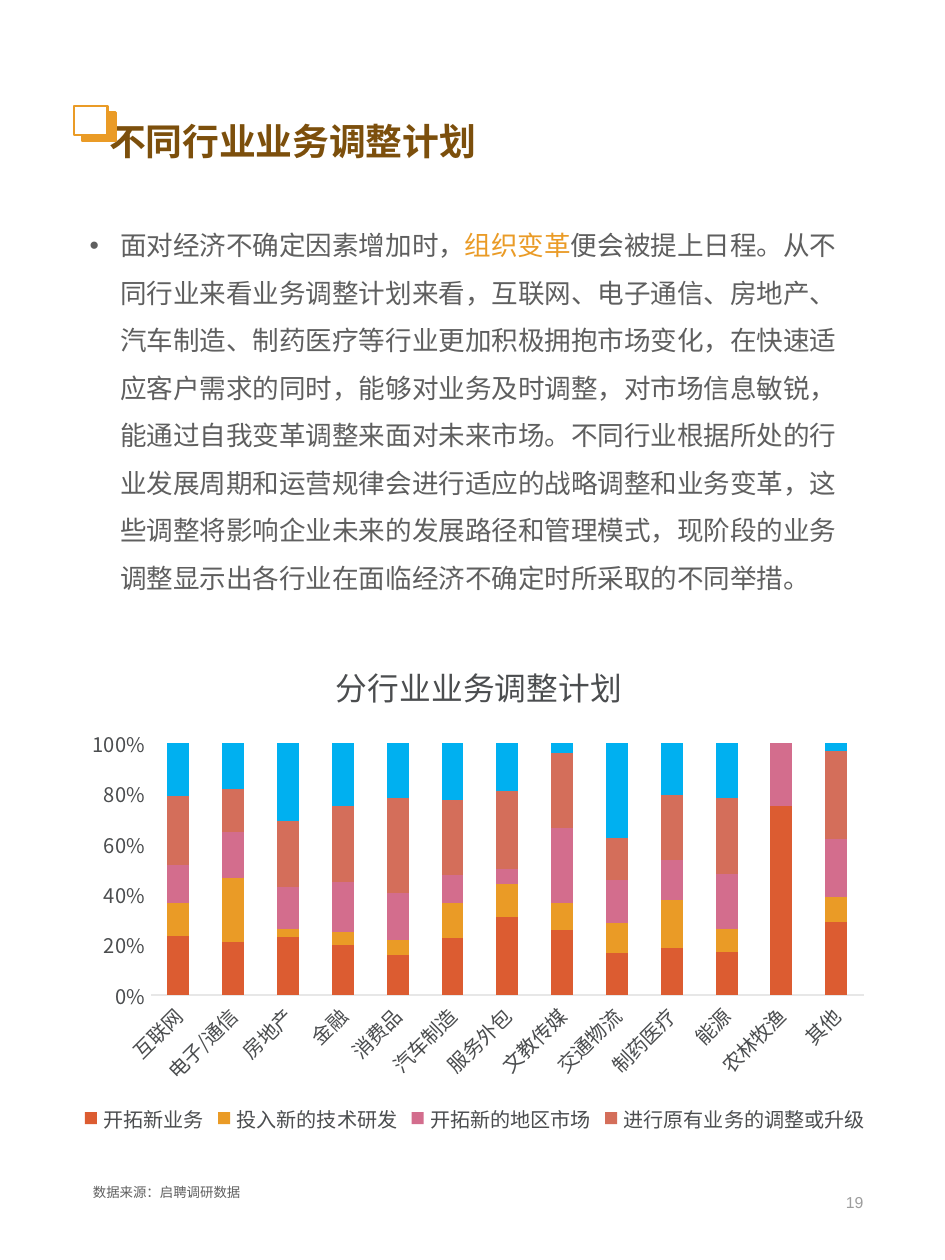
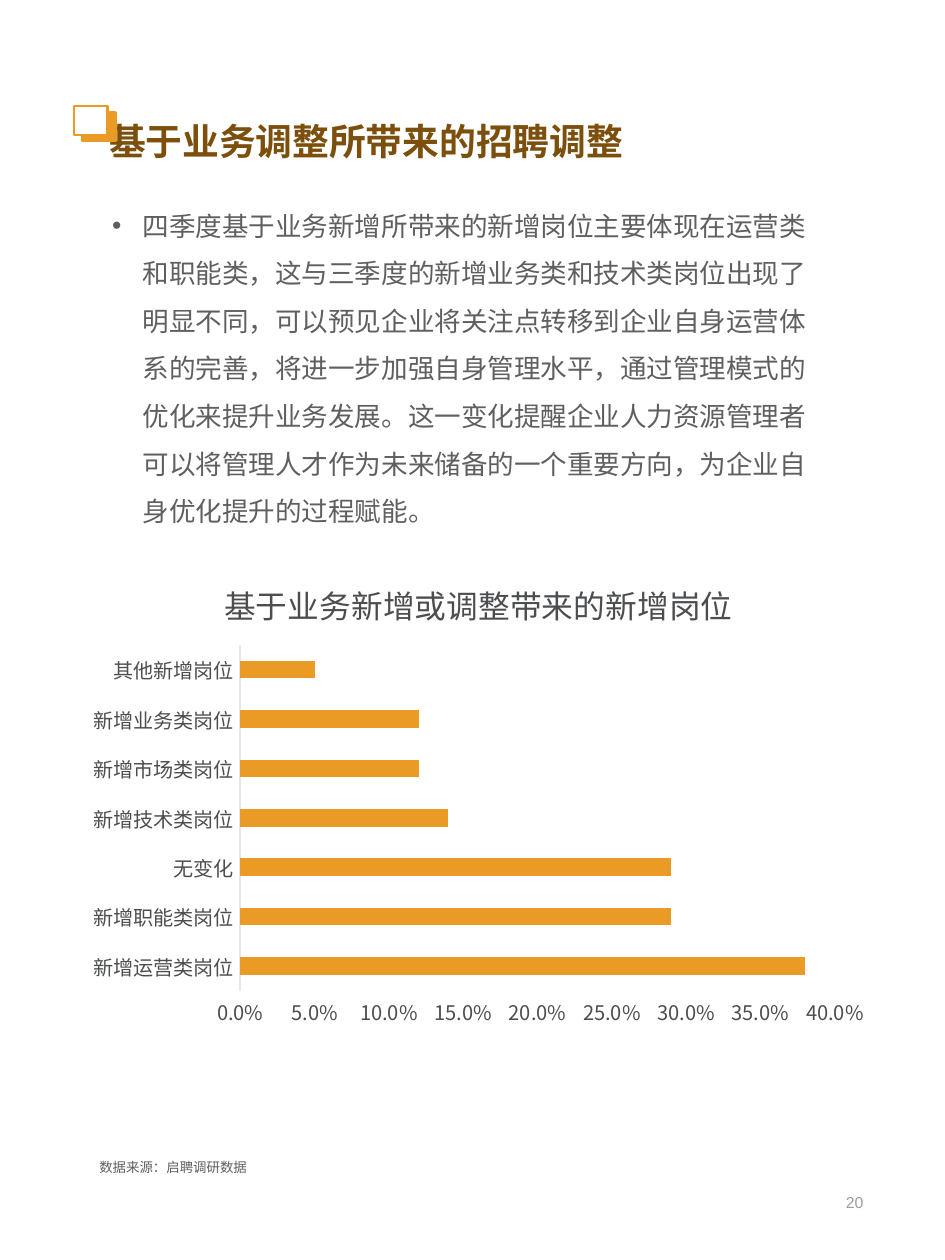
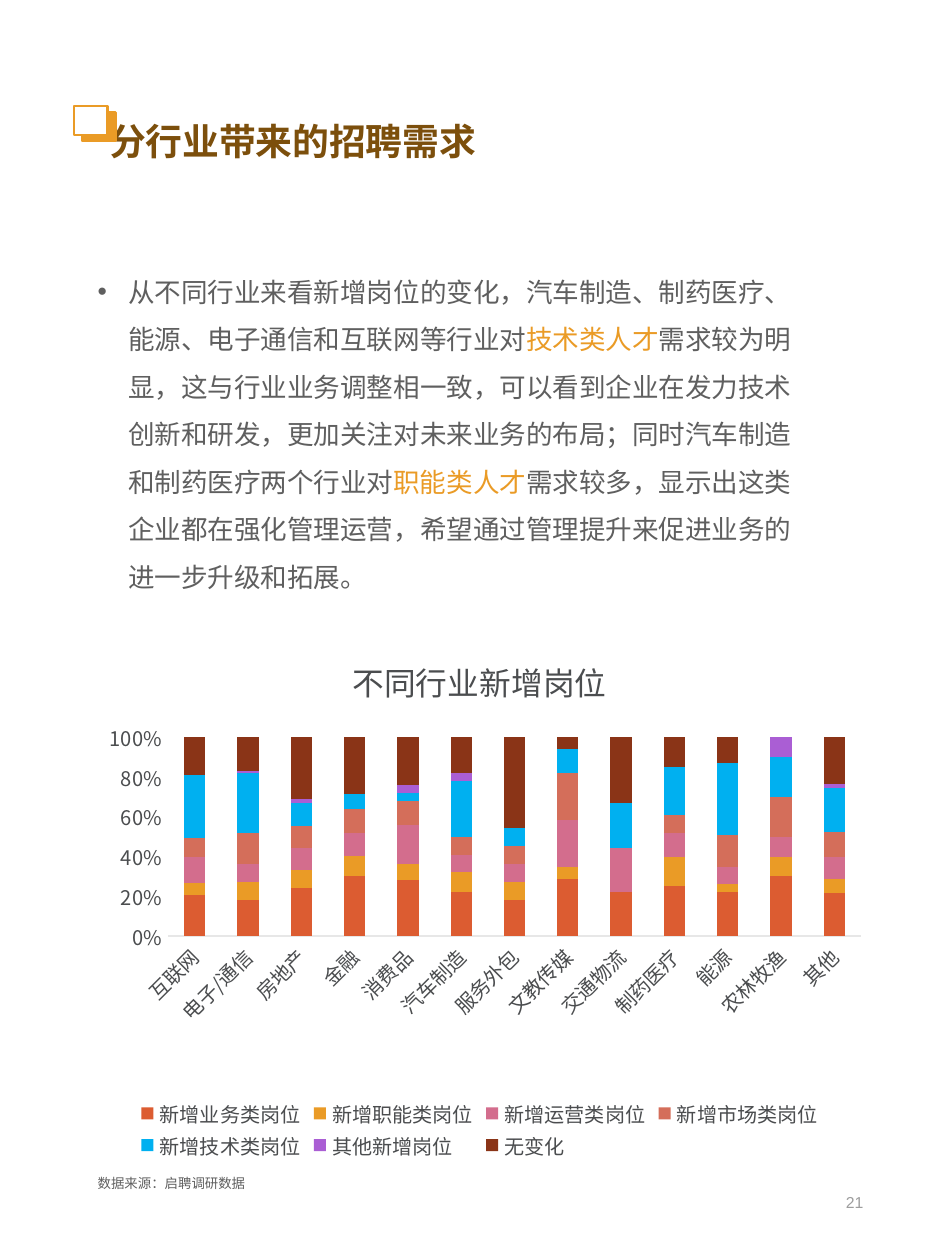
from dataclasses import dataclass

from lxml import etree
from pptx import Presentation
from pptx.chart.data import CategoryChartData
from pptx.dml.color import RGBColor
from pptx.enum.chart import XL_CHART_TYPE, XL_LEGEND_POSITION, XL_TICK_MARK
from pptx.enum.shapes import MSO_SHAPE
from pptx.enum.text import MSO_ANCHOR, MSO_AUTO_SIZE, PP_ALIGN
from pptx.oxml.ns import qn
from pptx.util import Inches, Pt


@dataclass(frozen=True)
class Theme:
    brown: str = "7C4F0C"
    orange: str = "EA9B26"
    white: str = "FFFFFF"
    body_grey: str = "5F5F5F"
    chart_grey: str = "4B4D4F"
    axis_grey: str = "E7E7E7"
    number_grey: str = "9D9D9D"
    vermilion: str = "DC5C31"
    pink: str = "D36D8D"
    coral: str = "D46E5A"
    blue: str = "00B0F0"
    purple: str = "AA5ED4"
    rust: str = "8A3417"
    title_font: str = "Montserrat"
    latin_font: str = "Arial"
    cjk_font: str = "Noto Sans CJK SC"
    title_size: float = 16.5
    body_size: float = 11.9
    body_pitch: float = 21.3
    chart_title_size: float = 14.2
    label_size: float = 9
    number_size: float = 7.1
    source_size: float = 6
    source_pitch: float = 9.4


THEME = Theme()
SOURCE_NOTE = "数据来源：启聘调研数据"
INDUSTRIES = ["互联网", "电子/通信", "房地产", "金融", "消费品", "汽车制造", "服务外包",
              "文教传媒", "交通物流", "制药医疗", "能源", "农林牧渔", "其他"]


def rgb(color):
    return RGBColor.from_string(color)


def style_font(font, name, size, color, bold=False):
    font.size = Pt(size)
    font.bold = bold
    font.color.rgb = rgb(color)
    font.name = name
    east_asian = etree.SubElement(font._element, qn("a:ea"))
    east_asian.set("typeface", THEME.cjk_font)


def add_text_frame(slide, box):
    frame = slide.shapes.add_textbox(*map(Inches, box)).text_frame
    frame.word_wrap = True
    return frame


def add_title(slide, text):
    title = slide.shapes.title
    title.left, title.top, title.width, title.height = map(Inches, (0.22, 0.27, 5.38, 0.8))
    frame = title.text_frame
    frame.auto_size = MSO_AUTO_SIZE.NONE
    frame.vertical_anchor = MSO_ANCHOR.BOTTOM
    frame.margin_left = Inches(0.46)
    frame.margin_bottom = Inches(0.05)
    frame.text = text
    heading = frame.paragraphs[0]
    heading.alignment = PP_ALIGN.LEFT
    heading.line_spacing = 0.9
    style_font(heading.font, THEME.title_font, THEME.title_size, THEME.brown, bold=True)


def add_title_marker(slide, left, top):
    """Two overlapping squares, the outlined one in front."""
    marker = slide.shapes.add_group_shape()
    for offset_x, offset_y, fill in ((0.05, 0.04, THEME.orange), (0, 0, THEME.white)):
        square = marker.shapes.add_shape(
            MSO_SHAPE.RECTANGLE, Inches(left + offset_x), Inches(top + offset_y),
            Inches(0.21), Inches(0.18))
        square.shadow.inherit = False
        square.fill.solid()
        square.fill.fore_color.rgb = rgb(fill)
        square.line.color.rgb = rgb(THEME.orange)
        square.line.width = Pt(1)


def add_page_number(slide, number):
    frame = add_text_frame(slide, (4.15, 7.27, 1.32, 0.42))
    frame.vertical_anchor = MSO_ANCHOR.MIDDLE
    frame.text = str(number)
    line = frame.paragraphs[0]
    line.alignment = PP_ALIGN.RIGHT
    style_font(line.font, THEME.latin_font, THEME.number_size, THEME.number_grey)


def add_source_note(slide, left, top):
    frame = add_text_frame(slide, (left, top, 1.2, 0.22))
    frame.auto_size = MSO_AUTO_SIZE.SHAPE_TO_FIT_TEXT
    frame.text = SOURCE_NOTE
    note = frame.paragraphs[0]
    note.line_spacing = Pt(THEME.source_pitch)
    style_font(note.font, THEME.latin_font, THEME.source_size, THEME.body_grey)


def add_commentary(slide, box, parts, font_name=THEME.latin_font):
    """One bulleted paragraph; every second part is highlighted."""
    frame = add_text_frame(slide, box)
    frame.auto_size = MSO_AUTO_SIZE.SHAPE_TO_FIT_TEXT
    frame.margin_top = Inches(0.05)
    comment = frame.paragraphs[0]
    properties = comment._p.get_or_add_pPr()
    properties.set("marL", str(Inches(0.19)))
    properties.set("indent", str(-Inches(0.19)))
    etree.SubElement(properties, qn("a:buFont")).set("typeface", THEME.latin_font)
    etree.SubElement(properties, qn("a:buChar")).set("char", "•")
    comment.line_spacing = Pt(THEME.body_pitch)
    style_font(comment.font, font_name, THEME.body_size, THEME.body_grey)
    for index, part in enumerate(parts):
        run = comment.add_run()
        run.text = part
        if index % 2:
            run.font.color.rgb = rgb(THEME.orange)


def set_layout(element, index, inner=False, **fractions):
    """Place a chart part by x, y, w, h as fractions of the chart."""
    for old in element.findall(qn("c:layout")):
        element.remove(old)
    layout = etree.Element(qn("c:layout"))
    manual = etree.SubElement(layout, qn("c:manualLayout"))
    if inner:
        etree.SubElement(manual, qn("c:layoutTarget")).set("val", "inner")
    for key in ("x", "y"):
        etree.SubElement(manual, qn(f"c:{key}Mode")).set("val", "edge")
    for key, value in fractions.items():
        etree.SubElement(manual, qn(f"c:{key}")).set("val", f"{value:.3f}")
    element.insert(index, layout)


def add_chart_title(chart, text, width, height):
    frame = chart.chart_title.text_frame
    frame.text = text
    style_font(frame.paragraphs[0].font, THEME.cjk_font, THEME.chart_title_size,
               THEME.chart_grey)
    text_width = len(text) * THEME.chart_title_size / 72
    set_layout(chart.chart_title._element, 1,
               x=((width - text_width) / 2 - 0.04) / width, y=0.12 / height)
    chart.chart_title.include_in_layout = False


def style_axes(chart, maximum, step, number_format):
    for axis in (chart.category_axis, chart.value_axis):
        axis.has_major_gridlines = False
        axis.major_tick_mark = axis.minor_tick_mark = XL_TICK_MARK.NONE
        style_font(axis.tick_labels.font, THEME.cjk_font, THEME.label_size, THEME.chart_grey)
    chart.category_axis.format.line.color.rgb = rgb(THEME.axis_grey)
    chart.category_axis.format.line.width = Pt(0.75)
    values = chart.value_axis
    values.format.line.fill.background()
    values.minimum_scale, values.maximum_scale, values.major_unit = 0, maximum, step
    values.tick_labels.number_format = number_format
    values.tick_labels.number_format_is_linked = False


def add_chart(slide, box, kind, title, categories, series, plot_box, gap):
    """series holds (name, values, colour); plot_box is in fractions of the chart."""
    data = CategoryChartData()
    data.categories = categories
    for name, values, _ in series:
        data.add_series(name, values)
    chart = slide.shapes.add_chart(kind, *map(Inches, box), data).chart
    style_font(chart.font, THEME.cjk_font, 10, THEME.chart_grey)
    chart.has_legend = False
    add_chart_title(chart, title, *box[2:])
    plot = chart.plots[0]
    plot.gap_width = gap
    plot.vary_by_categories = False
    for drawn, (_, _, color) in zip(plot.series, series):
        drawn.format.fill.solid()
        drawn.format.fill.fore_color.rgb = rgb(color)
        drawn.invert_if_negative = False
    plot_area = chart._chartSpace.chart.plotArea
    set_layout(plot_area, 0, inner=True, **dict(zip("xywh", plot_box)))
    return chart


def add_legend(chart, box, names):
    """List the named series only; an unnamed one gets no swatch."""
    chart.has_legend = True
    legend = chart.legend
    legend.position = XL_LEGEND_POSITION.BOTTOM
    legend.include_in_layout = False
    style_font(legend.font, THEME.cjk_font, THEME.label_size, THEME.chart_grey)
    set_layout(legend._element, 1, **dict(zip("xywh", box)))
    unnamed = [index for index, name in enumerate(names) if not name]
    for position, index in enumerate(unnamed, 1):
        entry = etree.Element(qn("c:legendEntry"))
        etree.SubElement(entry, qn("c:idx")).set("val", str(index))
        etree.SubElement(entry, qn("c:delete")).set("val", "1")
        legend._element.insert(position, entry)


def add_industry_chart(slide, box, title, series, plot_box, legend_box):
    chart = add_chart(slide, box, XL_CHART_TYPE.COLUMN_STACKED_100, title, INDUSTRIES,
                      series, plot_box, gap=150)
    chart.plots[0].overlap = 100
    style_axes(chart, 1, 0.2, "0%")
    labels = chart.category_axis._element.find(qn("c:txPr"))
    labels.find(qn("a:bodyPr")).set("rot", "-2700000")
    add_legend(chart, legend_box, [name for name, _, _ in series])


def add_position_chart(slide, box, title, categories, values):
    chart = add_chart(slide, box, XL_CHART_TYPE.BAR_CLUSTERED, title, categories,
                      [("", values, THEME.orange)],
                      (0.203, 0.191, 0.74, 0.718), gap=182)
    style_axes(chart, 0.4, 0.05, "0.0%")


def add_report_slide(prs, title, number, source_at):
    slide = prs.slides.add_slide(prs.slide_layouts[5])
    add_title(slide, title)
    add_title_marker(slide, 0.46, 0.66)
    add_page_number(slide, number)
    add_source_note(slide, *source_at)
    return slide


def build_business_plans(prs):
    slide = add_report_slide(prs, "不同行业业务调整计划", 19, (0.48, 7.29))
    add_commentary(slide, (0.46, 1.28, 4.93, 2.46), [
        "面对经济不确定因素增加时，",
        "组织变革",
        "便会被提上日程。从不同行业来看业务调整计划来看，互联网、电子通信、房地产、汽车制造、"
        "制药医疗等行业更加积极拥抱市场变化，在快速适应客户需求的同时，能够对业务及时调整，"
        "对市场信息敏锐，能通过自我变革调整来面对未来市场。不同行业根据所处的行业发展周期和"
        "运营规律会进行适应的战略调整和业务变革，这些调整将影响企业未来的发展路径和管理模式，"
        "现阶段的业务调整显示出各行业在面临经济不确定时所采取的不同举措。",
    ], THEME.cjk_font)
    series = [
        ("开拓新业务", [23, 21, 23, 20, 16, 23, 31, 26, 17, 19, 17, 75, 29], THEME.vermilion),
        ("投入新的技术研发", [13, 25, 3, 5, 6, 14, 13, 11, 12, 19, 9, 0, 10], THEME.orange),
        ("开拓新的地区市场", [15, 18, 17, 20, 19, 11, 6, 30, 17, 16, 22, 25, 23], THEME.pink),
        ("进行原有业务的调整或升级",
         [27, 17, 26, 30, 38, 30, 31, 30, 17, 26, 30, 0, 35], THEME.coral),
        ("", [21, 18, 31, 25, 22, 23, 19, 4, 38, 21, 22, 0, 3], THEME.blue),
    ]
    add_industry_chart(slide, (0.48, 3.95, 5, 3.24), "分行业业务调整计划", series,
                       plot_box=(0.092, 0.208, 0.887, 0.484),
                       legend_box=(0, 0.866, 0.99, 0.125))


def build_recruiting_changes(prs):
    slide = add_report_slide(prs, "基于业务调整所带来的招聘调整", 20, (0.52, 7.13))
    add_commentary(slide, (0.6, 1.16, 4.53, 2.16), [
        "四季度基于业务新增所带来的新增岗位主要体现在运营类和职能类，这与三季度的新增业务类和"
        "技术类岗位出现了明显不同，可以预见企业将关注点转移到企业自身运营体系的完善，将进一步"
        "加强自身管理水平，通过管理模式的优化来提升业务发展。这一变化提醒企业人力资源管理者"
        "可以将管理人才作为未来储备的一个重要方向，为企业自身优化提升的过程赋能。",
    ])
    add_position_chart(
        slide, (0.48, 3.44, 5, 3), "基于业务新增或调整带来的新增岗位",
        ["新增运营类岗位", "新增职能类岗位", "无变化", "新增技术类岗位", "新增市场类岗位",
         "新增业务类岗位", "其他新增岗位"],
        [0.38, 0.29, 0.29, 0.14, 0.12, 0.12, 0.05])


def build_industry_demand(prs):
    slide = add_report_slide(prs, "分行业带来的招聘需求", 21, (0.51, 7.23))
    add_commentary(slide, (0.51, 1.57, 4.53, 2.16), [
        "从不同行业来看新增岗位的变化，汽车制造、制药医疗、能源、电子通信和互联网等行业对",
        "技术类人才",
        "需求较为明显，这与行业业务调整相一致，可以看到企业在发力技术创新和研发，更加关注对"
        "未来业务的布局；同时汽车制造和制药医疗两个行业对",
        "职能类人才",
        "需求较多，显示出这类企业都在强化管理运营，希望通过管理提升来促进业务的进一步升级和拓展。",
    ])
    series = [
        ("新增业务类岗位", [21, 18, 24, 31, 28, 22, 18, 29, 22, 25, 22, 30, 22], THEME.vermilion),
        ("新增职能类岗位", [6, 9, 9, 10, 8, 10, 9, 6, 0, 15, 4, 10, 7], THEME.orange),
        ("新增运营类岗位", [13, 9, 11, 12, 20, 9, 9, 24, 22, 12, 9, 10, 11], THEME.pink),
        ("新增市场类岗位", [10, 16, 11, 12, 12, 9, 9, 24, 0, 9, 16, 20, 13], THEME.coral),
        ("新增技术类岗位", [32, 30, 11, 8, 4, 28, 9, 12, 22, 24, 36, 20, 22], THEME.blue),
        ("其他新增岗位", [0, 1, 2, 0, 4, 4, 0, 0, 0, 0, 0, 10, 2], THEME.purple),
        ("无变化", [19, 17, 31, 29, 24, 18, 45, 6, 33, 15, 13, 0, 24], THEME.rust),
    ]
    add_industry_chart(slide, (0.46, 3.92, 5.05, 3.35), "不同行业新增岗位", series,
                       plot_box=(0.116, 0.199, 0.854, 0.37),
                       legend_box=(0.075, 0.865, 0.85, 0.125))


def main():
    prs = Presentation()
    prs.slide_width, prs.slide_height = Inches(5.88), Inches(7.84)
    build_business_plans(prs)
    build_recruiting_changes(prs)
    build_industry_demand(prs)
    prs.save("out.pptx")


if __name__ == "__main__":
    main()
